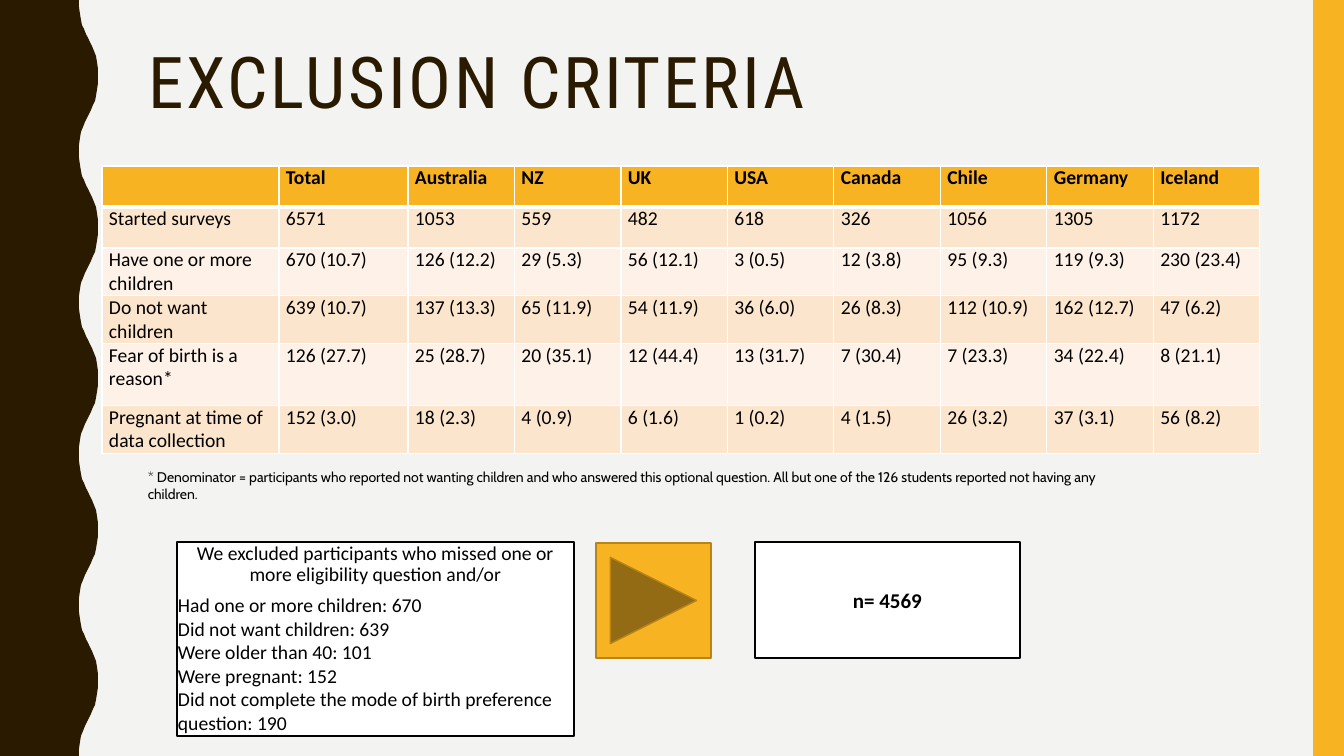
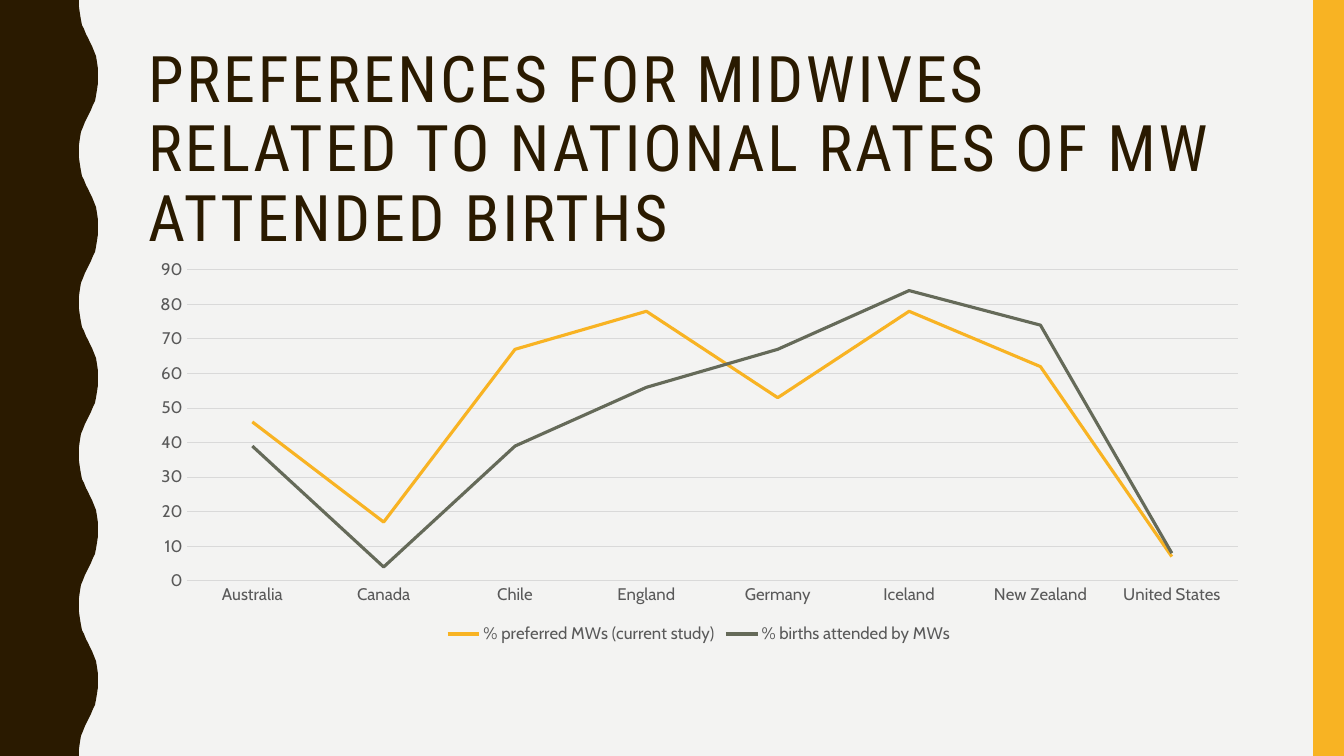
"""Build two slides: the exclusion criteria table and the midwife preference chart."""
from pptx import Presentation
from pptx.chart.data import CategoryChartData
from pptx.dml.color import RGBColor
from pptx.enum.chart import XL_CHART_TYPE, XL_LEGEND_POSITION, XL_MARKER_STYLE, XL_TICK_MARK
from pptx.enum.shapes import MSO_SHAPE
from pptx.enum.text import MSO_ANCHOR, MSO_AUTO_SIZE, PP_ALIGN
from pptx.oxml import parse_xml
from pptx.oxml.ns import nsdecls, qn
from pptx.util import Emu, Pt

SCALE = 12192000 / 1344
COLORS = {
    "paper": "F3F3F2", "brown": "2A1A00", "gold": "F8B323", "dark gold": "B7841A",
    "peach": "FCE5CD", "cream": "FEF2E8", "white": "FFFFFF", "black": "000000",
    "olive": "656A59", "gray": "595959", "grid": "D9D9D9",
}
RGB = {name: RGBColor.from_string(value) for name, value in COLORS.items()}
BODY = {"name": "Calibri", "size": Pt(14), "bold": False}
BOLD = {**BODY, "bold": True}
RESULT = {**BOLD, "size": Pt(15)}
NOTE = {"name": "Cabin", "size": Pt(10)}
CHART_TEXT = {"name": "Cabin", "size": Pt(12)}


def px(length):
    return Emu(round(length * SCALE))


def write(para, text, style):
    span = para.add_run()
    span.text = text
    for key, value in style.items():
        setattr(span.font, key, value)
    span.font.color.rgb = RGB["black"]


deck = Presentation()
deck.slide_width, deck.slide_height = px(1344), px(756)
master = deck.slide_master
master.background.fill.solid()
master.background.fill.fore_color.rgb = RGB["paper"]

title_style = master.element.find(".//" + qn("p:titleStyle"))
title_style.replace(title_style.find(qn("a:lvl1pPr")), parse_xml(
    f'<a:lvl1pPr {nsdecls("a")} algn="l"><a:lnSpc><a:spcPct val="90000"/></a:lnSpc>'
    '<a:spcBef><a:spcPct val="0"/></a:spcBef><a:buNone/>'
    f'<a:defRPr sz="5100" spc="200"><a:solidFill><a:srgbClr val="{COLORS["brown"]}"/></a:solidFill>'
    '<a:latin typeface="Roboto Condensed"/></a:defRPr></a:lvl1pPr>'))

layout = deck.slide_layouts.get_by_name("Title Only")
layout_title = layout.placeholders[0]
layout_title.left, layout_title.top = px(138), px(42)
layout_title.width, layout_title.height = px(1122), px(164)
layout_title.text_frame.vertical_anchor = MSO_ANCHOR.TOP
layout_title.text_frame.auto_size = MSO_AUTO_SIZE.NONE

criteria = deck.slides.add_slide(layout)
criteria.shapes.title.text = "EXCLUSION CRITERIA"

WAVE_X = [79, 79, 80, 81, 82, 84, 86, 88, 90, 92, 94, 96, 97, 98, 98]
WAVE_Y = [0, 7, 14, 20, 25, 29, 34, 38, 42, 46, 51, 56, 62, 69, 76]
wave_points = []
for half in range(10):
    for x, y in zip(WAVE_X, WAVE_Y):
        wave_points.append((177 - x if half % 2 else x, min(756, round(75.6 * half) + y)))
builder = criteria.shapes.build_freeform(0, 0, scale=SCALE)
builder.add_line_segments(wave_points + [(0, 756)], close=True)
wave = builder.convert_to_shape()
band = criteria.shapes.add_shape(MSO_SHAPE.RECTANGLE, px(1313), 0, px(31), px(756))
for number, (shape, color) in enumerate([(wave, "brown"), (band, "gold")]):
    shape.shadow.inherit = False
    shape.fill.solid()
    shape.fill.fore_color.rgb = RGB[color]
    shape.line.fill.background()
    shape.element.find(".//" + qn("p:cNvPr")).set("id", str(20 + number))
    master.shapes.element.insert(2 + number, shape.element)

ROWS = [
    "|Total|Australia|NZ|UK|USA|Canada|Chile|Germany|Iceland",
    "Started surveys|6571|1053|559|482|618|326|1056|1305|1172",
    "Have one or more children|670 (10.7)|126 (12.2)|29 (5.3)|56 (12.1)|3 (0.5)|12 (3.8)"
    "|95 (9.3)|119 (9.3)|230 (23.4)",
    "Do not want children|639 (10.7)|137 (13.3)|65 (11.9)|54 (11.9)|36 (6.0)|26 (8.3)"
    "|112 (10.9)|162 (12.7)|47 (6.2)",
    "Fear of birth is a reason*|126 (27.7)|25 (28.7)|20 (35.1)|12 (44.4)|13 (31.7)|7 (30.4)"
    "|7 (23.3)|34 (22.4)|8 (21.1)",
    "Pregnant at time of data collection|152 (3.0)|18 (2.3)|4 (0.9)|6 (1.6)|1 (0.2)|4 (1.5)"
    "|26 (3.2)|37 (3.1)|56 (8.2)",
]
ROW_HEIGHTS = [41, 41, 41, 41, 62, 41]
COLUMN_WIDTHS = [177, 129] + [852 / 8] * 8
table = criteria.shapes.add_table(
    len(ROWS), len(COLUMN_WIDTHS), px(102), px(166), px(1158), px(sum(ROW_HEIGHTS))).table
for column, width in zip(table.columns, COLUMN_WIDTHS):
    column.width = px(width)
for row_index, (row, height, line) in enumerate(zip(table.rows, ROW_HEIGHTS, ROWS)):
    row.height = px(height)
    fill = "gold" if row_index == 0 else ("cream", "peach")[row_index % 2]
    for cell, text in zip(row.cells, line.split("|")):
        cell.margin_left = cell.margin_right = px(7)
        cell.margin_top = cell.margin_bottom = 0
        cell.fill.solid()
        cell.fill.fore_color.rgb = RGB[fill]
        if text:
            write(cell.text_frame.paragraphs[0], text, BOLD if row_index == 0 else BODY)
        properties = cell._tc.get_or_add_tcPr()
        for order, side in enumerate("LRTB"):
            thick = (row_index, side) in [(0, "B"), (1, "T")]
            properties.insert(order, parse_xml(
                f'<a:ln{side} {nsdecls("a")} w="{Pt(3 if thick else 1)}"><a:solidFill>'
                f'<a:srgbClr val="{COLORS["white"]}"/></a:solidFill></a:ln{side}>'))

note = criteria.shapes.add_textbox(px(138), px(464), px(1018), px(57))
note.text_frame.word_wrap = True
write(note.text_frame.paragraphs[0],
      "* Denominator = participants who reported not wanting children and who answered this "
      "optional question. All but one of the 126 students reported not having any children.", NOTE)

REASONS = [
    "We excluded participants who missed one or more eligibility question and/or",
    "Had one or more children: 670",
    "Did not want children: 639",
    "Were older than 40: 101",
    "Were pregnant: 152",
    "Did not complete the mode of birth preference question: 190",
]
BOXES = [
    (MSO_SHAPE.RECTANGLE, 177, 542, 397, 194, "white", "black", REASONS, BODY),
    (MSO_SHAPE.RECTANGLE, 755, 542, 265, 116, "white", "black", ["n= 4569"], RESULT),
    (MSO_SHAPE.ACTION_BUTTON_FORWARD_OR_NEXT, 596, 543, 115, 115, "gold", "dark gold", [], BODY),
]
for kind, left, top, width, height, fill, outline, lines, style in BOXES:
    box = criteria.shapes.add_shape(kind, px(left), px(top), px(width), px(height))
    box.shadow.inherit = False
    box.fill.solid()
    box.fill.fore_color.rgb = RGB[fill]
    box.line.color.rgb = RGB[outline]
    box.line.width = Pt(1)
    frame = box.text_frame
    frame.word_wrap = True
    frame.vertical_anchor = MSO_ANCHOR.MIDDLE
    for side in ("left", "top", "right", "bottom"):
        setattr(frame, f"margin_{side}", px(1))
    for index, text in enumerate(lines):
        para = frame.add_paragraph() if index else frame.paragraphs[0]
        para.alignment = PP_ALIGN.LEFT if index else PP_ALIGN.CENTER
        if index == 0 and len(lines) > 1:
            para.line_spacing = 0.9
            para.space_after = Pt(5)
        write(para, text, style)

preferences = deck.slides.add_slide(layout)
preferences.shapes.title.text = (
    "PREFERENCES FOR MIDWIVES RELATED TO NATIONAL RATES OF MW ATTENDED BIRTHS")
preferences.shapes.title.text_frame.paragraphs[0].runs[0].font.size = Pt(45.9)

chart_data = CategoryChartData()
chart_data.categories = ["Australia", "Canada", "Chile", "England", "Germany", "Iceland",
                         "New Zealand", "United States"]
chart_data.add_series("% preferred MWs (current study)", [46, 17, 67, 78, 53, 78, 62, 7])
chart_data.add_series("% births attended by MWs", [39, 4, 39, 56, 67, 84, 74, 8])
chart = preferences.shapes.add_chart(
    XL_CHART_TYPE.LINE, px(138), px(252), px(1122), px(396), chart_data).chart
chart.has_title = False
chart.has_legend = True
chart.legend.position = XL_LEGEND_POSITION.BOTTOM
chart.legend.include_in_layout = False
for key, value in CHART_TEXT.items():
    setattr(chart.font, key, value)
chart.font.color.rgb = RGB["gray"]
chart.plots[0].vary_by_categories = False
for series, color in zip(chart.plots[0].series, ("gold", "olive")):
    series.smooth = False
    series.marker.style = XL_MARKER_STYLE.NONE
    series.format.line.color.rgb = RGB[color]
    series.format.line.width = Pt(2.25)

values, categories = chart.value_axis, chart.category_axis
values.minimum_scale, values.maximum_scale, values.major_unit = 0, 90, 10
values.has_major_gridlines = True
for axis in (values, categories):
    axis.major_tick_mark = axis.minor_tick_mark = XL_TICK_MARK.NONE
for line in (values.major_gridlines.format.line, categories.format.line):
    line.color.rgb = RGB["grid"]
    line.width = Pt(0.75)
values.format.line.fill.background()

deck.save("out.pptx")
